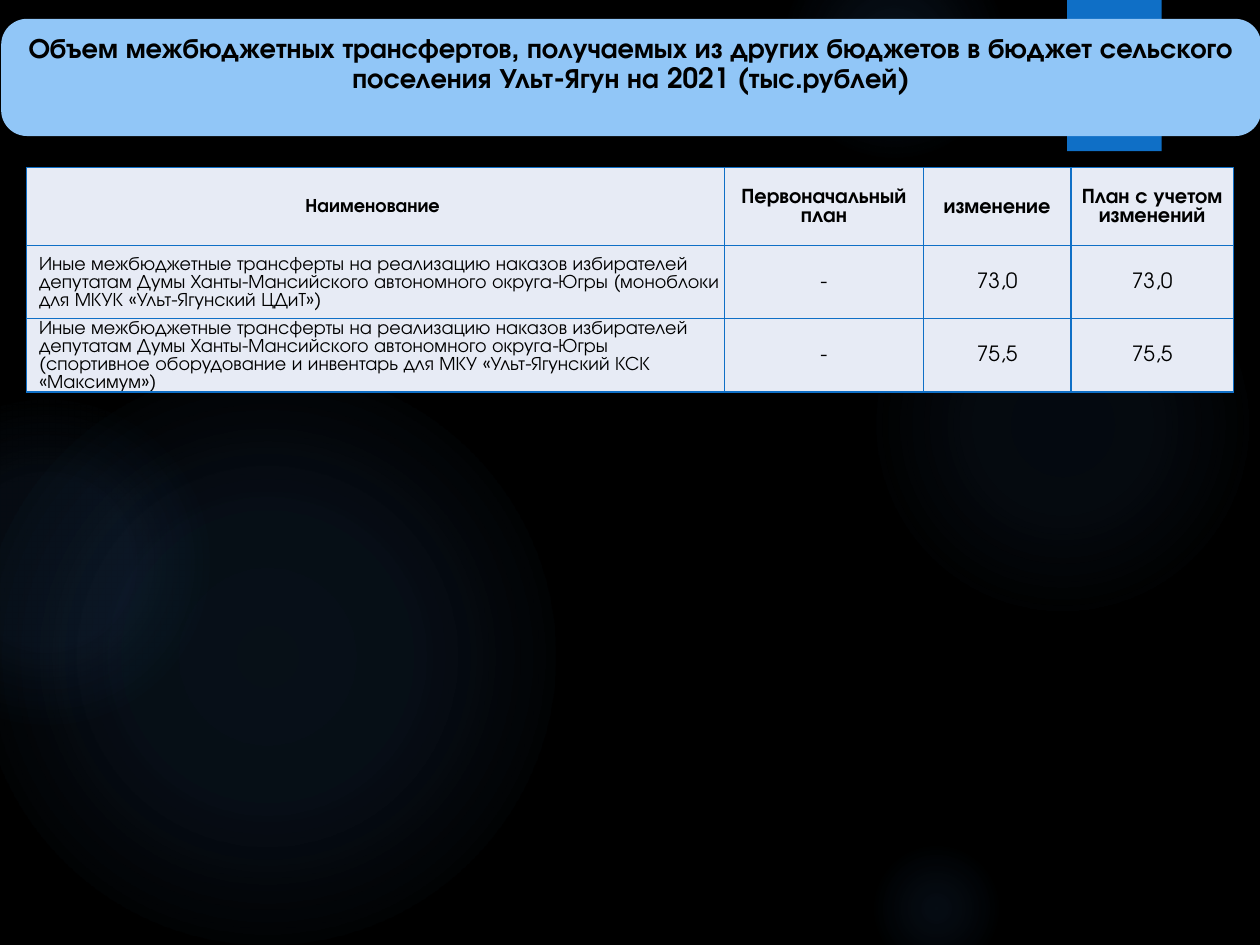
from pptx import Presentation
from pptx.dml.color import RGBColor
from pptx.enum.shapes import MSO_SHAPE
from pptx.enum.text import MSO_ANCHOR, MSO_AUTO_SIZE, PP_ALIGN
from pptx.oxml import parse_xml
from pptx.util import Inches, Pt

OVAL, RECTANGLE = MSO_SHAPE.OVAL, MSO_SHAPE.RECTANGLE
ROUNDED = MSO_SHAPE.ROUNDED_RECTANGLE
TOP, MIDDLE = MSO_ANCHOR.TOP, MSO_ANCHOR.MIDDLE
LEFT, CENTER = PP_ALIGN.LEFT, PP_ALIGN.CENTER
NO_FIT = MSO_AUTO_SIZE.NONE
BLACK = RGBColor(0x00, 0x00, 0x00)
BLUE = RGBColor(0x0F, 0x6F, 0xC6)
GLOW = RGBColor(0x44, 0x8A, 0xD7)
SKY = RGBColor(0x91, 0xC6, 0xF7)
PALE = RGBColor(0xE7, 0xEB, 0xF5)
FONT = "TeX Gyre Adventor"
NAMESPACE = 'xmlns:a="http://schemas.openxmlformats.org/drawingml/2006/main"'

TITLE = ("Объем межбюджетных трансфертов, получаемых из других бюджетов "
         "в бюджет сельского поселения Ульт-Ягун на 2021 (тыс.рублей)")
GRANT = ("Иные межбюджетные трансферты на реализацию наказов избирателей "
         "депутатам Думы Ханты-Мансийского автономного округа-Югры ")
ROWS = [
    ("Наименование ", "Первоначальный план", "изменение", "План с учетом изменений"),
    (GRANT + "(моноблоки для МКУК «Ульт-Ягунский ЦДиТ»)", "-", "73,0", "73,0"),
    (GRANT + "(спортивное оборудование и инвентарь для МКУ "
     "«Ульт-Ягунский КСК «Максимум»)", "-", "75,5", "75,5"),
]
COLUMN_WIDTHS = (5.54, 1.58, 1.17, 1.29)
ROW_HEIGHTS = (0.62, 0.58, 0.58)
BANNER = (0.01, 0.15, 10, 0.93)
GLOWS = [
    (6.89, 1.83, 3.08, ((0, 7), (36, 6), (69, 0))),
    (6.22, -0.5, 1.75, ((0, 14), (36, 7), (73, 0))),
    (6.89, 6.67, 1.08, ((0, 9), (36, 5), (66, 0))),
    (-0.17, 2.92, 4.58, ((0, 11), (36, 10), (75, 0))),
    (-0.92, 3.17, 2.58, ((0, 8), (36, 8), (72, 0))),
]


def add_shape(slide, kind, left, top, width, height, color):
    """Add a flat shape without outline or shadow."""
    shape = slide.shapes.add_shape(
        kind, Inches(left), Inches(top), Inches(width), Inches(height))
    shape.shadow.inherit = False
    shape.fill.solid()
    shape.fill.fore_color.rgb = color
    shape.line.fill.background()
    return shape


def add_glow(slide, left, top, size, stops):
    """Add a circle that fades out from its centre."""
    circle = add_shape(slide, OVAL, left, top, size, size, GLOW)
    marks = "".join(
        f'<a:gs pos="{place * 1000}"><a:srgbClr val="{GLOW}">'
        f'<a:alpha val="{opacity * 1000}"/></a:srgbClr></a:gs>'
        for place, opacity in stops)
    gradient = parse_xml(
        f'<a:gradFill {NAMESPACE} rotWithShape="1"><a:gsLst>{marks}</a:gsLst>'
        '<a:path path="circle"><a:fillToRect l="50000" t="50000" r="50000" b="50000"/>'
        '</a:path></a:gradFill>')
    properties = circle._element.spPr
    properties.replace(properties.find("{*}solidFill"), gradient)


def write(frame, text, size, bold, align, spacing):
    """Set a frame's text as one formatted paragraph."""
    frame.text = text
    para = frame.paragraphs[0]
    para.alignment = align
    para.line_spacing = spacing
    font = para.runs[0].font
    font.name, font.size, font.bold = FONT, Pt(size), bold
    font.color.rgb = BLACK


def add_borders(cell):
    """Draw a thin line on all four sides of a cell."""
    properties = cell._tc.get_or_add_tcPr()
    for index, side in enumerate(("lnL", "lnR", "lnT", "lnB")):
        properties.insert(index, parse_xml(
            f'<a:{side} {NAMESPACE} w="{Pt(1)}"><a:solidFill>'
            f'<a:srgbClr val="{BLUE}"/></a:solidFill></a:{side}>'))


def add_budget_table(slide):
    """Add the table of transfers."""
    table = slide.shapes.add_table(
        len(ROWS), len(COLUMN_WIDTHS), Inches(0.21), Inches(1.33),
        Inches(sum(COLUMN_WIDTHS)), Inches(sum(ROW_HEIGHTS))).table
    table.first_row = table.horz_banding = False
    for column, width in zip(table.columns, COLUMN_WIDTHS):
        column.width = Inches(width)
    for row, height, texts in zip(table.rows, ROW_HEIGHTS, ROWS):
        row.height = Inches(height)
        header = texts is ROWS[0]
        for index, (cell, text) in enumerate(zip(row.cells, texts)):
            label = index == 0
            description = label and not header
            cell.fill.solid()
            cell.fill.fore_color.rgb = PALE
            cell.vertical_anchor = MIDDLE
            cell.margin_left = Inches(0.1 if description else 0.01)
            cell.margin_right = cell.margin_top = Inches(0.01)
            cell.margin_bottom = 0
            write(cell.text_frame, text, 11 if label else 12, header,
                  LEFT if description else CENTER, 1.0)
            add_borders(cell)


def add_banner(slide):
    """Put the title placeholder over a rounded banner."""
    banner = add_shape(slide, ROUNDED, *BANNER, SKY)
    banner.adjustments[0] = 0.22
    title = slide.shapes.title
    title.left, title.top, title.width, title.height = map(Inches, BANNER)
    frame = title.text_frame
    frame.word_wrap = True
    frame.auto_size = NO_FIT
    frame.vertical_anchor = TOP
    frame.margin_left = frame.margin_right = Inches(0.1)
    frame.margin_top = Inches(0.12)
    write(frame, TITLE, 16, True, CENTER, 0.9)
    banner._element.addnext(title._element)


def main():
    """Build the slide and save it."""
    deck = Presentation()
    deck.slide_width, deck.slide_height = Inches(10), Inches(7.5)
    slide = deck.slides.add_slide(deck.slide_layouts[5])
    slide.background.fill.solid()
    slide.background.fill.fore_color.rgb = BLACK
    for glow in GLOWS:
        add_glow(slide, *glow)
    add_shape(slide, RECTANGLE, 8.47, 0, 0.75, 1.2, BLUE)
    add_budget_table(slide)
    add_banner(slide)
    deck.save("out.pptx")


if __name__ == "__main__":
    main()
